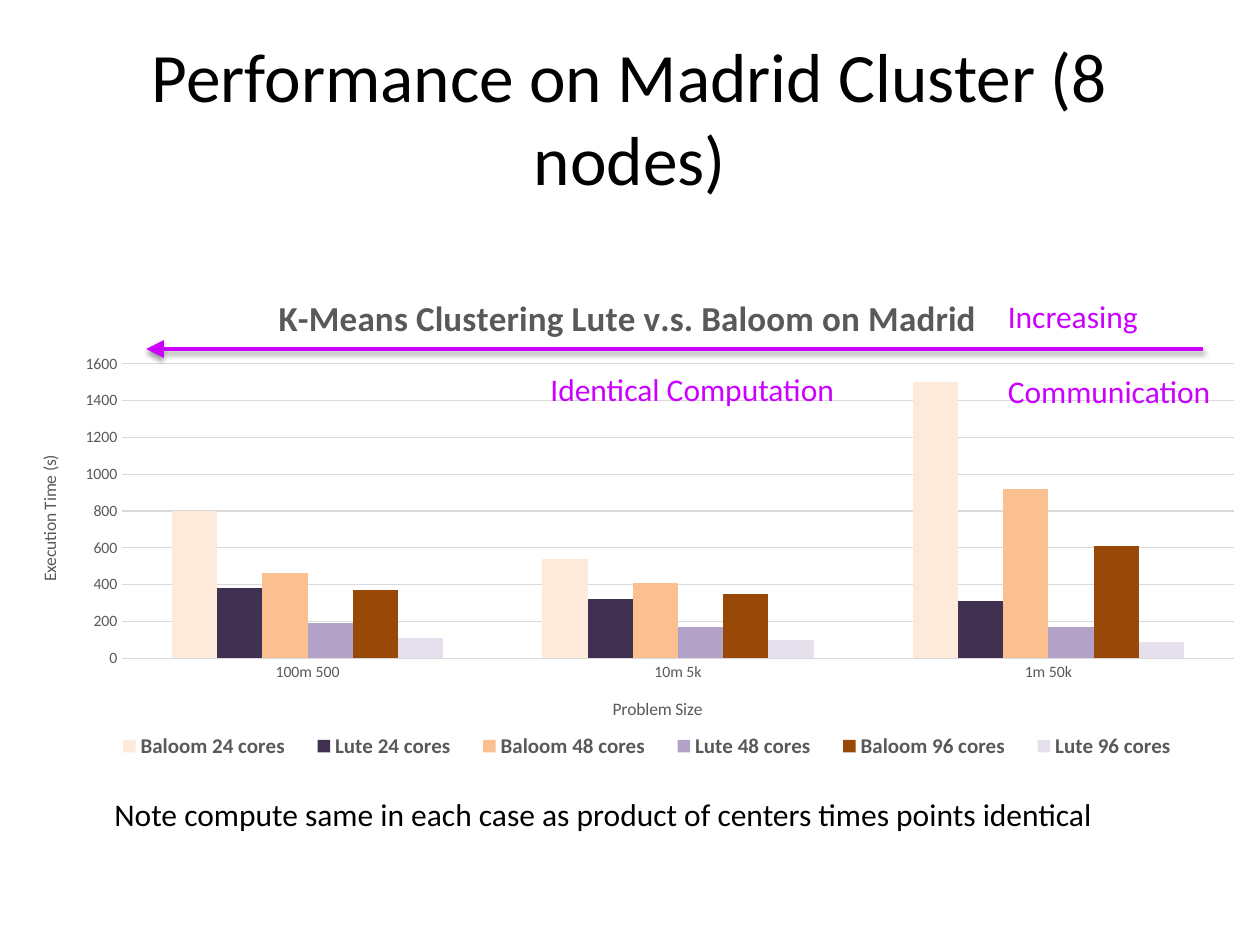
from dataclasses import dataclass

from lxml import etree
from pptx import Presentation
from pptx import util as u
from pptx.chart.data import CategoryChartData
from pptx.dml.color import RGBColor
from pptx.enum import chart as charts, shapes, text
from pptx.oxml import parse_xml
from pptx.oxml.ns import nsdecls, qn


@dataclass(frozen=True)
class Theme:
    font: str = "Calibri"
    ink: str = "000000"
    muted: str = "595959"
    rule: str = "D9D9D9"
    accent: str = "CC00FF"
    title: float = 39.6
    chart_title: int = 20
    body: int = 18
    legend: int = 12
    axis_title: int = 10
    axis: int = 9


CATEGORIES = ["100m 500", "10m 5k", "1m 50k"]
SERIES = [  # name, values, fill
    ("Baloom 24 cores", (800, 540, 1500), "FDEADA"),
    ("Lute 24 cores", (380, 320, 310), "403152"),
    ("Baloom 48 cores", (460, 410, 920), "FAC090"),
    ("Lute 48 cores", (190, 170, 170), "B3A2C7"),
    ("Baloom 96 cores", (370, 350, 610), "984807"),
    ("Lute 96 cores", (110, 100, 90), "E6E0EC"),
]


class SlideBuilder:
    """Places elements on a grid of 100 columns by 75 rows."""

    def __init__(self, presentation, theme):
        self.theme = theme
        self.slide = presentation.slides.add_slide(presentation.slide_layouts[6])
        self.column = presentation.slide_width / 100
        self.row = presentation.slide_height / 75

    def grid(self, *lengths):
        units = (self.column, self.row) * 2
        return [u.Emu(round(length * unit)) for length, unit in zip(lengths, units)]

    def style(self, font, size, color, bold=False):
        font.name = self.theme.font
        font.size = u.Pt(size)
        font.bold = bold
        font.color.rgb = RGBColor.from_string(color)

    def text(self, box, lines, size, color, centred=False, wrap=True, gap=0):
        frame = self.slide.shapes.add_textbox(*self.grid(*box)).text_frame
        frame.text = "\n".join(lines)
        frame.word_wrap = wrap
        if centred:
            frame.vertical_anchor = text.MSO_ANCHOR.MIDDLE
        else:
            frame.auto_size = text.MSO_AUTO_SIZE.SHAPE_TO_FIT_TEXT
        for index, paragraph in enumerate(frame.paragraphs):
            paragraph.alignment = text.PP_ALIGN.CENTER if centred else text.PP_ALIGN.LEFT
            paragraph.space_before = u.Pt(gap if index else 0)
            for run in paragraph.runs:
                self.style(run.font, size, color)

    def arrow(self, start, end, color, width):
        connector = self.slide.shapes.add_connector(
            shapes.MSO_CONNECTOR.STRAIGHT, *self.grid(*start, *end))
        connector.line.color.rgb = RGBColor.from_string(color)
        connector.line.width = u.Pt(width)
        properties = connector.element.spPr
        etree.SubElement(properties.find(qn("a:ln")), qn("a:tailEnd"),
                         type="triangle", w="lg", len="lg")
        properties.append(parse_xml(
            f'<a:effectLst {nsdecls("a")}><a:outerShdw blurRad="40000" dist="20000" '
            f'dir="5400000" rotWithShape="0"><a:srgbClr val="{self.theme.ink}">'
            '<a:alpha val="38000"/></a:srgbClr></a:outerShdw></a:effectLst>'))

    def place(self, element, index, inner=False, **shares):
        """Fix a chart part at shares of the chart's size."""
        for old in element.findall(qn("c:layout")):
            element.remove(old)
        layout = etree.Element(qn("c:layout"))
        manual = etree.SubElement(layout, qn("c:manualLayout"))
        if inner:
            etree.SubElement(manual, qn("c:layoutTarget"), val="inner")
        for side in "xy":
            etree.SubElement(manual, qn(f"c:{side}Mode"), val="edge")
        for side, share in shares.items():
            etree.SubElement(manual, qn(f"c:{side}"), val=str(share))
        element.insert(index, layout)

    def heading(self, title, words, size, x, y, bold=False):
        title.text_frame.text = words
        for run in title.text_frame.paragraphs[0].runs:
            self.style(run.font, size, self.theme.muted, bold)
        self.place(title._element, 1, x=x, y=y)

    def column_chart(self, box, title, category_title, value_title):
        theme = self.theme
        data = CategoryChartData()
        data.categories = CATEGORIES
        for name, values, _ in SERIES:
            data.add_series(name, values)
        chart = self.slide.shapes.add_chart(
            charts.XL_CHART_TYPE.COLUMN_CLUSTERED, *self.grid(*box), data).chart
        self.style(chart.font, theme.axis_title, theme.ink)

        # Columns
        plot = chart.plots[0]
        plot.gap_width, plot.overlap = 219, 0
        plot.vary_by_categories = False
        for series, (_, _, color) in zip(plot.series, SERIES):
            series.format.fill.solid()
            series.format.fill.fore_color.rgb = RGBColor.from_string(color)
        self.place(chart._chartSpace.chart.plotArea, 0, inner=True,
                   x=0.09, y=0.18, w=0.89, h=0.57)

        # Axes
        value_axis, category_axis = chart.value_axis, chart.category_axis
        value_axis.minimum_scale, value_axis.maximum_scale = 0, 1600
        value_axis.major_unit = 200
        for axis in (value_axis, category_axis):
            axis.major_tick_mark = charts.XL_TICK_MARK.NONE
            axis.minor_tick_mark = charts.XL_TICK_MARK.NONE
            self.style(axis.tick_labels.font, theme.axis, theme.muted)
        value_axis.format.line.fill.background()
        for line in (category_axis.format.line, value_axis.major_gridlines.format.line):
            line.color.rgb = RGBColor.from_string(theme.rule)
            line.width = u.Pt(0.75)

        # Titles and legend
        self.heading(chart.chart_title, title, theme.chart_title, 0.21, 0.03, bold=True)
        self.heading(category_axis.axis_title, category_title, theme.axis_title, 0.48, 0.82)
        self.heading(value_axis.axis_title, value_title, theme.axis_title, 0.02, 0.35)
        chart.has_legend = True
        chart.legend.position = charts.XL_LEGEND_POSITION.BOTTOM
        chart.legend.include_in_layout = False
        self.style(chart.legend.font, theme.legend, theme.muted, bold=True)
        self.place(chart.legend._element, 1, x=0.07, y=0.89, w=0.88, h=0.06)


def main():
    presentation = Presentation()
    presentation.slide_width, presentation.slide_height = u.Inches(10), u.Inches(7.5)
    theme = Theme()
    builder = SlideBuilder(presentation, theme)

    # Title
    builder.text((5, 3, 90, 12.5), ["Performance on Madrid Cluster (8 nodes)"],
                 theme.title, theme.ink, centred=True)

    # Chart and the note below it
    builder.column_chart((0.8, 21.5, 99.1, 41),
                         "K-Means Clustering Lute v.s. Baloom on Madrid",
                         "Problem Size", "Execution Time (s)")
    builder.text((8.1, 62.6, 80, 4),
                 ["Note compute same in each case as product of centers times points identical"],
                 theme.body, theme.ink, wrap=False)

    # Trend arrow with its labels
    builder.arrow((95.5, 27.7), (11.6, 27.7), theme.accent, 2)
    builder.text((79, 23.1, 18.2, 10.1), ["Increasing", "Communication"],
                 theme.body, theme.accent, gap=21)
    builder.text((42.7, 28.9, 25.7, 4), ["Identical Computation"], theme.body, theme.accent)

    presentation.save("out.pptx")


if __name__ == "__main__":
    main()
